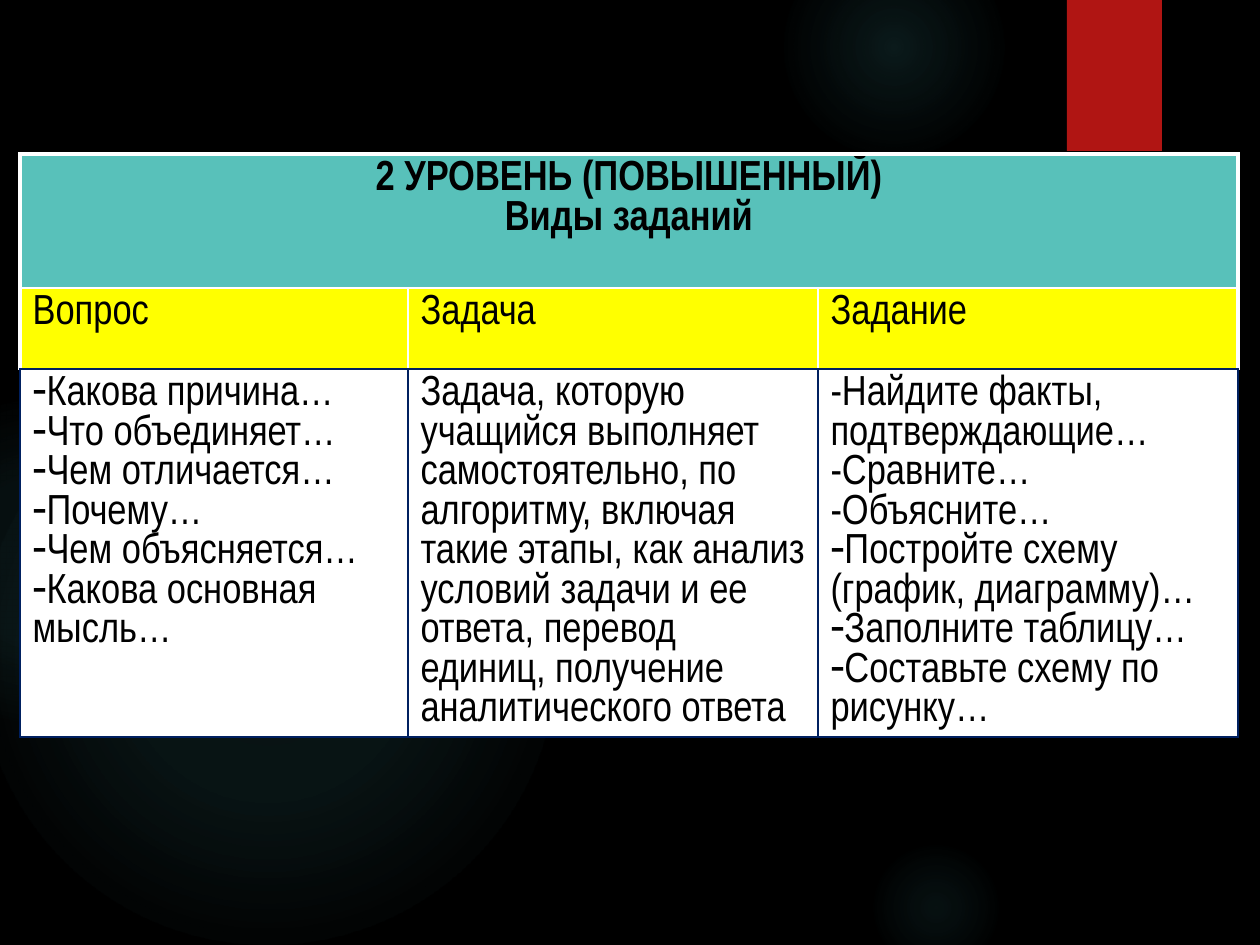
from dataclasses import dataclass

from pptx import Presentation
from pptx.dml.color import RGBColor as Rgb
from pptx.enum.shapes import MSO_SHAPE as Shape
from pptx.enum.text import PP_ALIGN as Align
from pptx.oxml import parse_xml
from pptx.oxml.ns import nsdecls
from pptx.util import Emu, Inches, Pt

SCALE = Inches(1) / 126


@dataclass(frozen=True)
class Theme:
    """Colours and type sizes of the slide."""
    background: str = "000000"
    glow: str = "50B9C1"
    ribbon: str = "B01513"
    title: str = "58C1BA"
    heading: str = "FFFF00"
    body: str = "FFFFFF"
    text: str = "000000"
    light_line: str = "FFFFFF"
    dark_line: str = "002060"
    font: str = "Arial Narrow"
    size: int = 24
    thin: float = 1
    thick: float = 2.25


THEME = Theme()
GLOWS = [
    ((784, -63, 220, 220), (14, 7, 0), 73),
    ((868, 840, 136, 136), (9, 5, 0), 66),
    ((-21, 368, 577, 577), (11, 10, 0), 75),
    ((-116, 399, 325, 325), (8, 8, 0), 72),
]
COLUMNS = [388, 410, 420]
ROWS = [134, 81, 368]
TITLE = ["2 УРОВЕНЬ (ПОВЫШЕННЫЙ)", "Виды заданий"]
HEADINGS = ["Вопрос", "Задача", "Задание"]
QUESTIONS = ["Какова причина…", "Что объединяет…", "Чем отличается…", "Почему…",
             "Чем объясняется…", "Какова основная мысль…"]
PROBLEM = ["Задача, которую учащийся выполняет самостоятельно, по алгоритму, "
           "включая такие этапы, как анализ условий задачи и ее ответа, "
           "перевод единиц, получение аналитического ответа"]
TASKS = ["-Найдите факты, подтверждающие…", "-Сравните…", "-Объясните…",
         "Постройте схему (график, диаграмму)…", "Заполните таблицу…",
         "Составьте схему по рисунку…"]
BODY = [(QUESTIONS, 0), (PROBLEM, len(PROBLEM)), (TASKS, 3)]


def px(length):
    """Turn pixels into EMU."""
    return Emu(round(length * SCALE))


def add_plain_shape(slide, kind, box):
    """Add a preset shape without line or shadow."""
    shape = slide.shapes.add_shape(kind, *map(px, box))
    shape.shadow.inherit = False
    shape.line.fill.background()
    return shape


def add_glow(slide, box, alphas, edge):
    """Add a soft circle that fades out towards its edge."""
    shape = add_plain_shape(slide, Shape.OVAL, box)
    shape.fill.background()
    stops = "".join(
        f'<a:gs pos="{position * 1000}"><a:srgbClr val="{THEME.glow}">'
        f'<a:alpha val="{alpha * 1000}"/></a:srgbClr></a:gs>'
        for position, alpha in zip((0, 36, edge), alphas))
    gradient = parse_xml(
        f'<a:gradFill {nsdecls("a")} rotWithShape="1"><a:gsLst>{stops}</a:gsLst>'
        '<a:path path="circle"><a:fillToRect l="50000" t="50000" r="50000" b="50000"/>'
        '</a:path></a:gradFill>')
    properties = shape.element.spPr
    properties.replace(properties.find("{*}noFill"), gradient)


def add_ribbon(slide, box):
    """Add the red ribbon with its soft shadow."""
    shape = add_plain_shape(slide, Shape.RECTANGLE, box)
    shape.fill.solid()
    shape.fill.fore_color.rgb = Rgb.from_string(THEME.ribbon)
    shape.element.spPr.find("{*}effectLst").append(parse_xml(
        f'<a:outerShdw {nsdecls("a")} blurRad="{Pt(3)}" dist="{Pt(2)}" dir="5400000">'
        '<a:srgbClr val="000000"><a:alpha val="45000"/></a:srgbClr></a:outerShdw>'))


def style_cell(cell, fill, borders):
    """Set the borders (left, right, top, bottom) and the fill of a cell."""
    properties = cell._tc.get_or_add_tcPr()
    for side, (color, width) in zip("LRTB", borders):
        properties.append(parse_xml(
            f'<a:ln{side} {nsdecls("a")} w="{Pt(width)}"><a:solidFill>'
            f'<a:srgbClr val="{color}"/></a:solidFill></a:ln{side}>'))
    cell.fill.solid()
    cell.fill.fore_color.rgb = Rgb.from_string(fill)


def write_cell(cell, lines, bullets_from=None, bold=False, align=Align.LEFT):
    """Write one paragraph a line, with dash bullets from the given line on."""
    frame = cell.text_frame
    for index, line in enumerate(lines):
        paragraph = frame.add_paragraph() if index else frame.paragraphs[0]
        paragraph.alignment = align
        run = paragraph.add_run()
        run.text = line
        run.font.name = THEME.font
        run.font.size = Pt(THEME.size)
        run.font.bold = bold
        run.font.color.rgb = Rgb.from_string(THEME.text)
        if bullets_from is not None and index >= bullets_from:
            properties = paragraph._p.get_or_add_pPr()
            properties.set("marL", "0")
            properties.set("indent", "0")
            properties.append(parse_xml(f'<a:buFontTx {nsdecls("a")}/>'))
            properties.append(parse_xml(f'<a:buChar {nsdecls("a")} char="-"/>'))


def add_task_table(slide, left, top):
    """Add the table of task types at the given corner."""
    table = slide.shapes.add_table(len(ROWS), len(COLUMNS), px(left), px(top),
                                   px(sum(COLUMNS)), px(sum(ROWS))).table
    table.first_row = table.horz_banding = False
    for column, width in zip(table.columns, COLUMNS):
        column.width = px(width)
    for row, height in zip(table.rows, ROWS):
        row.height = px(height)

    thick = (THEME.light_line, THEME.thick)
    thin = (THEME.light_line, THEME.thin)
    dark = (THEME.dark_line, THEME.thin)
    last = len(COLUMNS) - 1
    table.cell(0, 0).merge(table.cell(0, last))
    write_cell(table.cell(0, 0), TITLE, bold=True, align=Align.CENTER)
    for index, (heading, (lines, bullets_from)) in enumerate(zip(HEADINGS, BODY)):
        left_line = thin if index else thick
        right_line = thin if index < last else thick
        style_cell(table.cell(0, index), THEME.title, [thick, thick, thick, thin])
        style_cell(table.cell(1, index), THEME.heading,
                   [left_line, right_line, thin, dark])
        style_cell(table.cell(2, index), THEME.body, [dark] * 4)
        write_cell(table.cell(1, index), [heading])
        write_cell(table.cell(2, index), lines, bullets_from)


def main():
    """Build the slide and save it."""
    presentation = Presentation()
    presentation.slide_width = px(1260)
    presentation.slide_height = px(945)
    slide = presentation.slides.add_slide(presentation.slide_layouts[6])
    background = slide.background.fill
    background.solid()
    background.fore_color.rgb = Rgb.from_string(THEME.background)
    for box, alphas, edge in GLOWS:
        add_glow(slide, box, alphas, edge)
    add_ribbon(slide, (1067, 0, 95, 151))
    add_task_table(slide, 20, 154)
    presentation.save("out.pptx")


if __name__ == "__main__":
    main()
